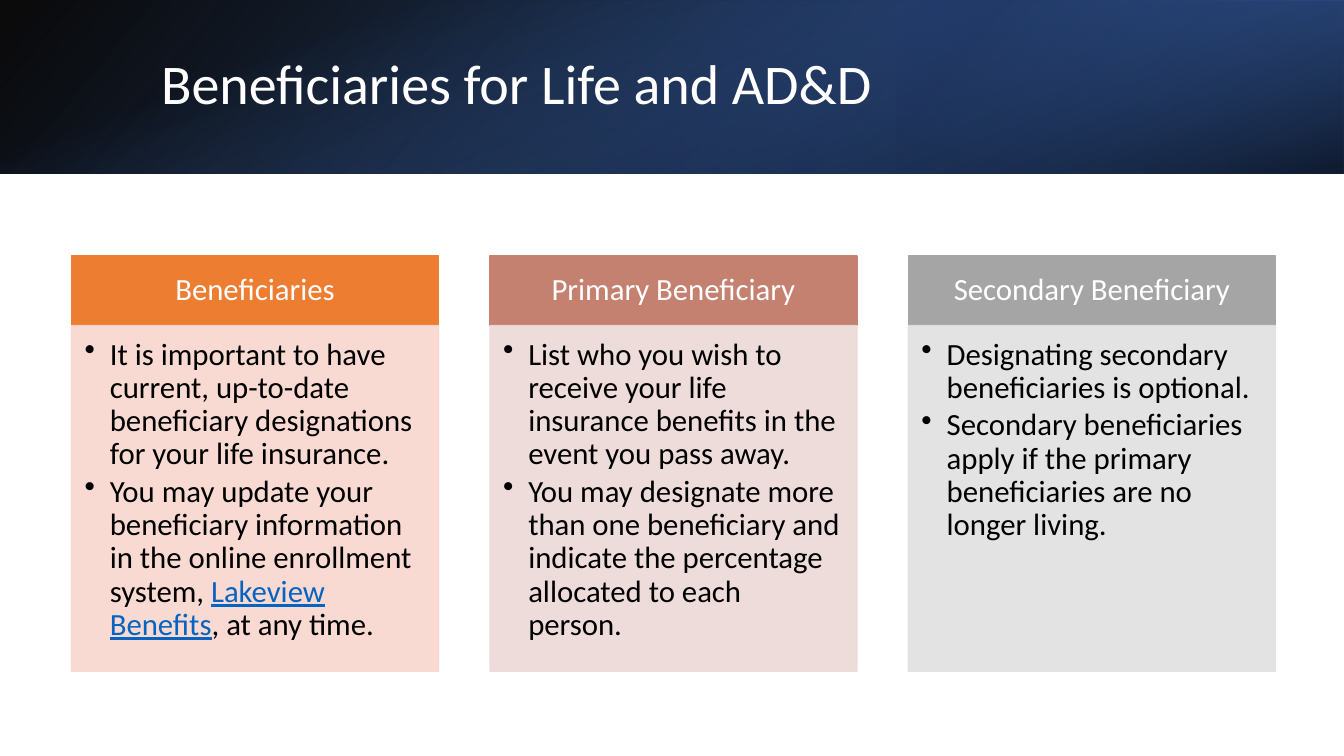
from lxml import etree
from pptx import Presentation
from pptx.dml.color import RGBColor
from pptx.enum import shapes, text
from pptx.oxml import parse_xml
from pptx.oxml.ns import nsdecls, qn
from pptx.util import Inches, Pt

FONT = "Calibri"
WHITE = RGBColor(0xFF, 0xFF, 0xFF)
BLACK = RGBColor(0, 0, 0)
NAVY = RGBColor(0x20, 0x38, 0x64)
DEEP_BLUE = RGBColor(0x2F, 0x55, 0x97)
BLUE = RGBColor(0x44, 0x72, 0xC4)
LINK = RGBColor(0x05, 0x63, 0xC1)
ORANGE = RGBColor(0xED, 0x7D, 0x31)
PEACH = RGBColor(0xF8, 0xD7, 0xCE)
CLAY = RGBColor(0xC4, 0x81, 0x70)
ROSE = RGBColor(0xED, 0xD9, 0xD7)
GREY = RGBColor(0xA5, 0xA5, 0xA5)
PALE_GREY = RGBColor(0xE1, 0xE1, 0xE1)

LINK_TEXT = "Lakeview Benefits"
COLUMNS = [
    ("Beneficiaries", ORANGE, PEACH, [
        ["It is important to have current, up-to-date beneficiary "
         "designations for your life insurance."],
        ["You may update your beneficiary information in the online "
         "enrollment system, ", LINK_TEXT, ", at any time."]]),
    ("Primary Beneficiary", CLAY, ROSE, [
        ["List who you wish to receive your life insurance benefits in the "
         "event you pass away."],
        ["You may designate more than one beneficiary and indicate the "
         "percentage allocated to each person."]]),
    ("Secondary Beneficiary", GREY, PALE_GREY, [
        ["Designating secondary beneficiaries is optional."],
        ["Secondary beneficiaries apply if the primary beneficiaries are no "
         "longer living."]]),
]
LEFT, PITCH, WIDTH = 0.71, 4.15, 3.64
HEAD_TOP, HEAD_HEIGHT, BODY_HEIGHT = 2.54, 0.69, 3.43
BANNER_HEIGHT = 1.72


def add_rect(s, x, y, w, h):
    sp = s.shapes.add_shape(shapes.MSO_SHAPE.RECTANGLE,
                            Inches(x), Inches(y), Inches(w), Inches(h))
    sp.shadow.inherit = False
    return sp


def add_gradient(s, box, stops, angle, rotation=0, flip=False):
    """Rectangle with a linear gradient; stops are (position, colour, opacity)."""
    sp = add_rect(s, *box)
    sp.line.fill.background()
    sp.rotation = rotation
    spPr = sp._element.spPr
    if flip:
        spPr.find(qn("a:xfrm")).set("flipH", "1")
    gs = "".join(
        f'<a:gs pos="{pos * 1000}"><a:srgbClr val="{color}">'
        f'<a:alpha val="{opacity * 1000}"/></a:srgbClr></a:gs>'
        for pos, color, opacity in stops)
    spPr.find(qn("a:prstGeom")).addnext(parse_xml(
        f'<a:gradFill {nsdecls("a")} rotWithShape="1"><a:gsLst>{gs}</a:gsLst>'
        f'<a:lin ang="{angle * 60000}" scaled="0"/></a:gradFill>'))


def add_panel(s, box, color, insets, anchor, opacity=100):
    """Filled and outlined rectangle; returns its text frame."""
    sp = add_rect(s, *box)
    sp.fill.solid()
    sp.fill.fore_color.rgb = color
    sp.line.color.rgb = color
    sp.line.width = Pt(1)
    if opacity < 100:
        for clr in sp._element.spPr.iter(qn("a:srgbClr")):
            etree.SubElement(clr, qn("a:alpha")).set("val", str(opacity * 1000))
    return set_frame(sp.text_frame, insets, anchor)


def set_frame(tf, insets, anchor):
    tf.word_wrap = True
    tf.vertical_anchor = anchor
    tf.margin_left, tf.margin_top, tf.margin_right, tf.margin_bottom = map(
        Inches, insets)
    return tf


def style(p, size, color, align=text.PP_ALIGN.LEFT):
    p.alignment = align
    p.line_spacing = 0.9
    p.font.name = FONT
    p.font.size = Pt(size)
    p.font.color.rgb = color


def add_bullets(tf, items):
    for i, pieces in enumerate(items):
        p = tf.paragraphs[0] if i == 0 else tf.add_paragraph()
        style(p, 22, BLACK)
        p.space_after = Pt(3)
        pPr = p._p.get_or_add_pPr()
        pPr.set("marL", str(Inches(0.25)))
        pPr.set("indent", str(-Inches(0.25)))
        bullet = parse_xml(f'<a:buChar {nsdecls("a")} char="•"/>')
        pPr.find(qn("a:defRPr")).addprevious(bullet)
        for piece in pieces:
            r = p.add_run()
            r.text = piece
            if piece == LINK_TEXT:
                r.font.underline = True
                r.font.color.rgb = LINK


def add_banner(s, title):
    add_gradient(s, (0, 0, 13.33, BANNER_HEIGHT),
                 [(0, BLACK, 96), (100, DEEP_BLUE, 100)], 140, flip=True)
    add_gradient(s, (8.89, 0, 4.44, BANNER_HEIGHT),
                 [(19, NAVY, 68), (100, BLUE, 79)], 320, 180, flip=True)
    add_gradient(s, (5.8, -5.8, BANNER_HEIGHT, 13.33),
                 [(23, BLUE, 0), (99, BLACK, 74)], 340, 90)
    tb = s.shapes.add_textbox(Inches(1.5), Inches(0.38),
                              Inches(10.98), Inches(0.96))
    tf = set_frame(tb.text_frame, (0.1, 0.05, 0.1, 0.05),
                   text.MSO_ANCHOR.MIDDLE)
    tf.text = title
    style(tf.paragraphs[0], 40, WHITE)


def add_column(s, x, heading, head_color, body_color, items):
    tf = add_panel(s, (x, HEAD_TOP, WIDTH, HEAD_HEIGHT), head_color,
                   (0.17, 0.1, 0.17, 0.1), text.MSO_ANCHOR.MIDDLE)
    tf.text = heading
    style(tf.paragraphs[0], 22, WHITE, text.PP_ALIGN.CENTER)
    tf = add_panel(s, (x, HEAD_TOP + HEAD_HEIGHT, WIDTH, BODY_HEIGHT),
                   body_color, (0.13, 0.13, 0.17, 0.19),
                   text.MSO_ANCHOR.TOP, opacity=90)
    add_bullets(tf, items)


def main():
    prs = Presentation()
    prs.slide_width, prs.slide_height = Inches(13.33), Inches(7.5)
    s = prs.slides.add_slide(prs.slide_layouts[6])

    # Title banner
    add_banner(s, "Beneficiaries for Life and AD&D")

    # Three columns
    for i, column in enumerate(COLUMNS):
        add_column(s, LEFT + i * PITCH, *column)

    prs.save("out.pptx")


if __name__ == "__main__":
    main()
